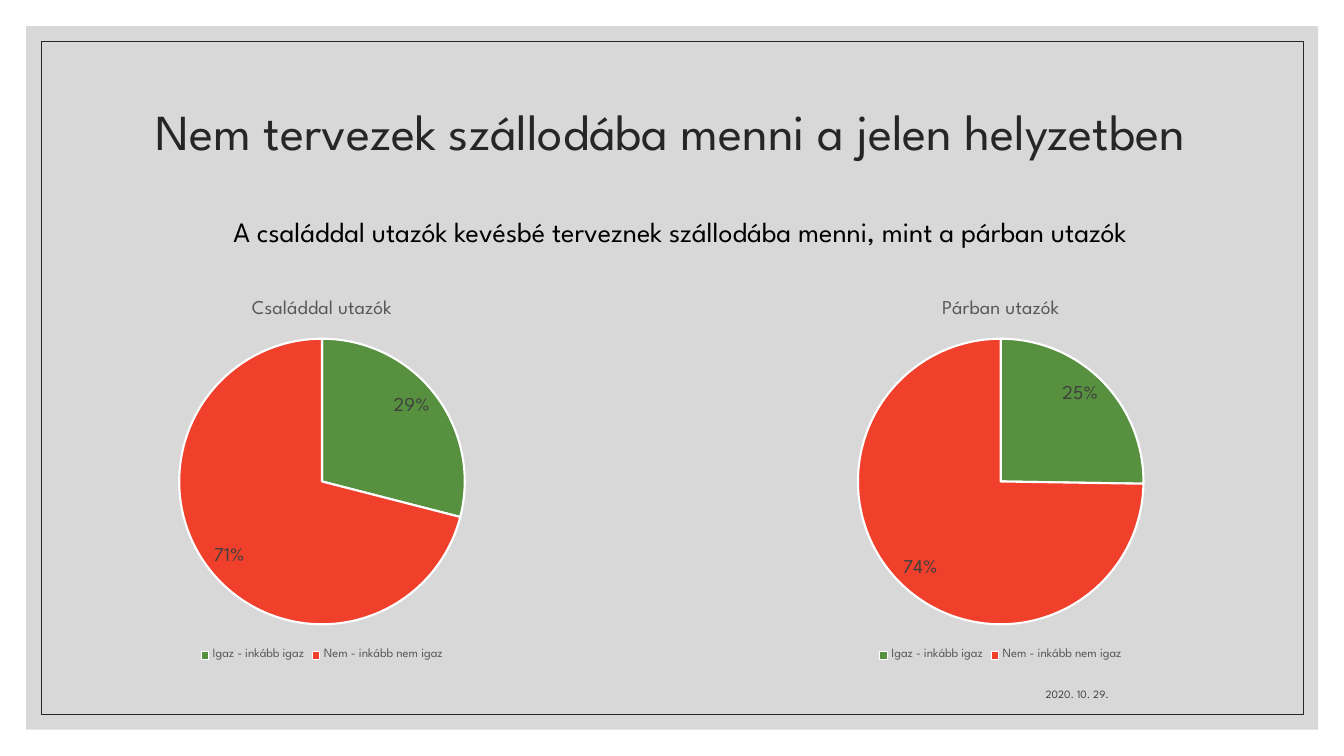
from dataclasses import dataclass

from lxml import etree
from pptx import Presentation
from pptx.chart.data import CategoryChartData
from pptx.dml.color import RGBColor
from pptx.enum.chart import XL_CHART_TYPE, XL_LABEL_POSITION, XL_LEGEND_POSITION
from pptx.enum.shapes import MSO_SHAPE
from pptx.enum.text import MSO_ANCHOR, PP_ALIGN
from pptx.oxml.ns import qn
from pptx.util import Cm, Pt

PIE = XL_CHART_TYPE.PIE
LABEL_INSIDE_END = XL_LABEL_POSITION.INSIDE_END
LEGEND_BOTTOM = XL_LEGEND_POSITION.BOTTOM
RECTANGLE = MSO_SHAPE.RECTANGLE
TOP, MIDDLE, BOTTOM = MSO_ANCHOR.TOP, MSO_ANCHOR.MIDDLE, MSO_ANCHOR.BOTTOM
CENTER, RIGHT = PP_ALIGN.CENTER, PP_ALIGN.RIGHT


@dataclass(frozen=True)
class Theme:
    font: str = "League Spartan"
    panel: str = "BFBFBF"
    panel_alpha: int = 60
    ink: str = "262626"
    black: str = "000000"
    label: str = "404040"
    muted: str = "595959"
    white: str = "FFFFFF"
    agree: str = "57903F"
    disagree: str = "F03F2B"
    title_size: int = 36
    subtitle_size: int = 20
    chart_size: int = 14
    legend_size: int = 9
    date_size: int = 8


THEME = Theme()
ANSWERS = ("Igaz - inkább igaz", "Nem - inkább nem igaz")
ANSWER_COLORS = (THEME.agree, THEME.disagree)
# Group name, shares, chart left and width in cm
GROUPS = (
    ("Családdal utazók", (0.29, 0.71), 1.22, 13.79),
    ("Párban utazók", (0.25, 0.74), 17.83, 14.78),
)
CHART_TOP, CHART_HEIGHT = 7.11, 9.65


def rgb(color):
    return RGBColor.from_string(color)


def apply_format(target, values):
    for attribute, value in values.items():
        setattr(target, attribute, value)


def format_font(font, size, color):
    apply_format(font, {"name": THEME.font, "size": Pt(size), "bold": False})
    font.color.rgb = rgb(color)


def place(shape, box):
    names = ("left", "top", "width", "height")
    apply_format(shape, {name: Cm(value) for name, value in zip(names, box)})


def write_text(shape, text, size, color, align, anchor, spacing=1.0):
    frame = shape.text_frame
    apply_format(frame, {"word_wrap": True, "vertical_anchor": anchor})
    paragraph = frame.paragraphs[0]
    apply_format(paragraph, {"alignment": align, "line_spacing": spacing})
    run = paragraph.add_run()
    run.text = text
    format_font(run.font, size, color)


def add_text(slide, box, *text_format):
    textbox = slide.shapes.add_textbox(*map(Cm, box))
    write_text(textbox, *text_format)


def add_rectangle(slide, box):
    rectangle = slide.shapes.add_shape(RECTANGLE, *map(Cm, box))
    rectangle.shadow.inherit = False
    return rectangle


def add_background(slide):
    # Translucent panel
    panel = add_rectangle(slide, (0.66, 0.66, 32.56, 17.73))
    panel.fill.solid()
    panel.fill.fore_color.rgb = rgb(THEME.panel)
    panel.line.fill.background()
    panel_color = panel._element.spPr.find(qn("a:solidFill"))[0]
    alpha = etree.SubElement(panel_color, qn("a:alpha"))
    alpha.set("val", str(THEME.panel_alpha * 1000))

    # Thin border
    border = add_rectangle(slide, (1.04, 1.04, 31.8, 16.97))
    border.fill.background()
    border.line.color.rgb = rgb(THEME.ink)
    border.line.width = Pt(0.5)


def add_title(slide, text):
    title = slide.shapes.title
    place(title, (1.22, 1.78, 31.37, 3.18))
    write_text(title, text, THEME.title_size, THEME.ink, CENTER, MIDDLE, 0.9)
    # Bring the title in front of the panel
    slide.shapes._spTree.append(title._element)


def add_pie(slide, group, shares, left, width):
    data = CategoryChartData(number_format="0%")
    data.categories = ANSWERS
    data.add_series(group, shares)
    box = (left, CHART_TOP, width, CHART_HEIGHT)
    chart = slide.shapes.add_chart(PIE, *map(Cm, box), data).chart
    format_font(chart.font, THEME.legend_size, THEME.black)

    # Chart title
    apply_format(chart, {"has_title": True, "has_legend": True})
    chart.chart_title.include_in_layout = False
    heading = chart.chart_title.text_frame
    heading.text = group
    format_font(heading.paragraphs[0].runs[0].font, THEME.chart_size, THEME.muted)

    # Legend
    legend = chart.legend
    apply_format(legend, {"position": LEGEND_BOTTOM, "include_in_layout": False})
    format_font(legend.font, THEME.legend_size, THEME.muted)

    # Slices
    plot = chart.plots[0]
    plot.vary_by_categories = True
    for index, color in enumerate(ANSWER_COLORS):
        slice_format = plot.series[0].points[index].format
        slice_format.fill.solid()
        slice_format.fill.fore_color.rgb = rgb(color)
        slice_format.line.color.rgb = rgb(THEME.white)
        slice_format.line.width = Pt(1.5)

    # Share labels
    labels = plot.series[0].data_labels
    apply_format(labels, {
        "show_value": True,
        "show_percentage": False,
        "number_format": "0%",
        "number_format_is_linked": False,
        "position": LABEL_INSIDE_END,
    })
    format_font(labels.font, THEME.chart_size, THEME.label)


def main():
    presentation = Presentation()
    apply_format(presentation, {"slide_width": Cm(33.87), "slide_height": Cm(19.05)})
    slide = presentation.slides.add_slide(presentation.slide_layouts[5])

    add_background(slide)
    add_title(slide, "Nem tervezek szállodába menni a jelen helyzetben")
    add_text(slide, (20.17, 16.76, 8.03, 1.02), "2020. 10. 29.",
             THEME.date_size, THEME.label, RIGHT, BOTTOM)
    for group in GROUPS:
        add_pie(slide, *group)
    add_text(slide, (1.68, 5.28, 30.94, 1.12),
             "A családdal utazók kevésbé terveznek szállodába menni, mint a párban utazók",
             THEME.subtitle_size, THEME.black, CENTER, TOP)

    presentation.save("out.pptx")


if __name__ == "__main__":
    main()
